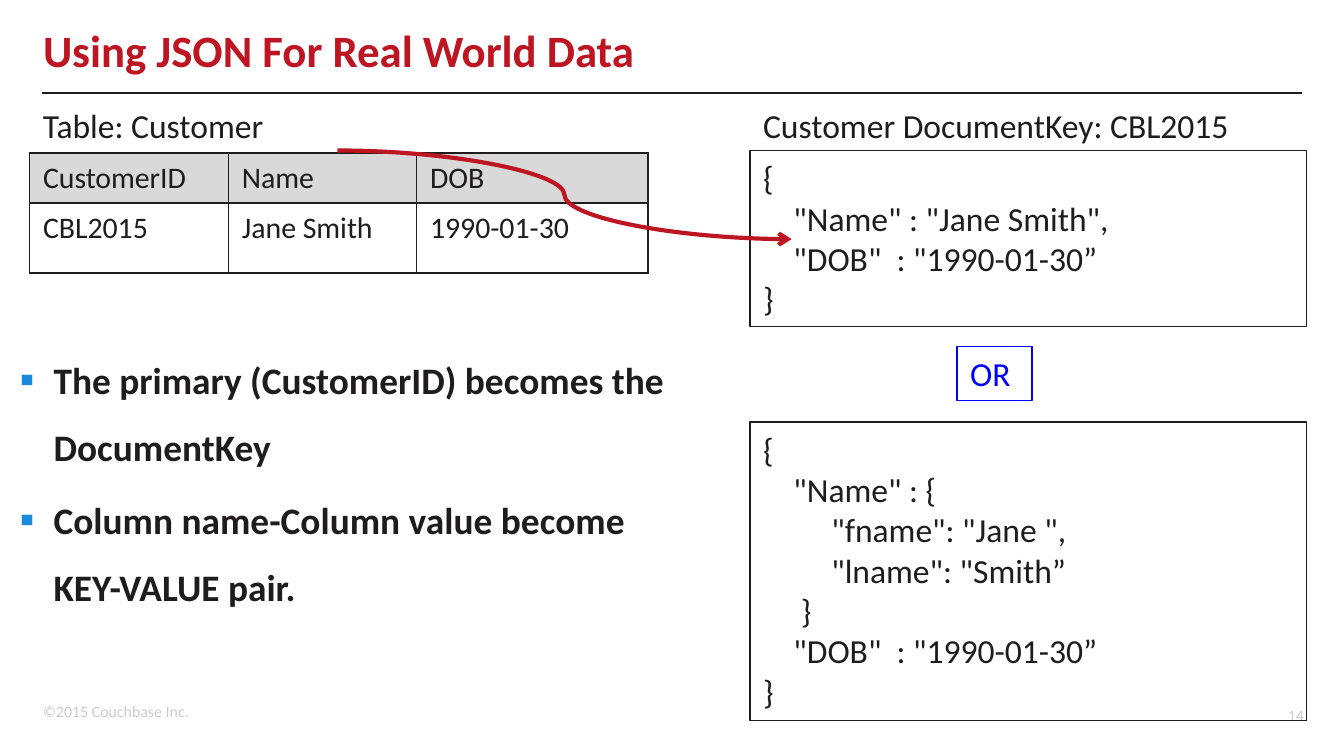
import pptx
import pptx.util
import pptx.dml.color
import pptx.enum.shapes
import pptx.enum.text
import pptx.oxml
import pptx.oxml.ns
import lxml.etree

INK, RED, BLUE, PALE = "1E1C1C", "BE1523", "0000FF", "CCCCCC"
LEFT, RIGHT = pptx.enum.text.PP_ALIGN.LEFT, pptx.enum.text.PP_ALIGN.RIGHT
TOP, MID = pptx.enum.text.MSO_ANCHOR.TOP, pptx.enum.text.MSO_ANCHOR.MIDDLE
KIND = pptx.enum.shapes.MSO_CONNECTOR
COLS, ROWS = 100, 56.25
FULL = (0, 0, COLS, ROWS)

SHORT = ["{", '    "Name" : "Jane Smith",', '    "DOB"  : "1990-01-30”', "}"]
NESTED = ["{", '    "Name" : {', '         "fname": "Jane ",',
          '         "lname": "Smith”', "     }", '    "DOB"  : "1990-01-30”', "}"]
CELLS = [["CustomerID", "Name", "DOB"], ["CBL2015", "Jane Smith", "1990-01-30"]]
POINTS = ["The primary (CustomerID) becomes the DocumentKey",
          "Column name-Column value become KEY-VALUE pair."]


def grid(*cells):
    """Turn counts of grid cells, a tenth of an inch each, into lengths."""
    return [pptx.util.Inches(cell / 10) for cell in cells]


def inner(box, x, y, w, h):
    """Return a box placed relative to the corner of another one."""
    return (box[0] + x, box[1] + y, w, h)


def tint(part, color):
    """Give a fill or line format a solid colour."""
    fill = getattr(part, "fill", part)
    fill.solid()
    fill.fore_color.rgb = pptx.dml.color.RGBColor.from_string(color)


def apply(target, form):
    """Set each attribute named in a dict."""
    for name, value in form.items():
        setattr(target, name, value)


def add_xml(parent, tag, **attrs):
    """Append one drawing element with attributes."""
    node = lxml.etree.SubElement(parent, pptx.oxml.ns.qn(tag))
    for name, value in attrs.items():
        node.set(name, value)
    return node


def bullet(para):
    """Give a paragraph a hanging blue square."""
    props = para._p.get_or_add_pPr()
    hang = grid(2.5)[0]
    props.set("marL", str(hang))
    props.set("indent", str(-hang))
    add_xml(add_xml(props, "a:buClr"), "a:srgbClr", val="178ADB")
    add_xml(props, "a:buSzPct", val="110000")
    add_xml(props, "a:buFont", typeface="Calibri")
    add_xml(props, "a:buChar", char="▪")


def write(frame, lines, size=18, color=INK, bold=False, anchor=TOP, dots=False, **form):
    """Fill a text frame with one paragraph for each line."""
    apply(frame, {"word_wrap": True, "vertical_anchor": anchor,
                  "auto_size": pptx.enum.text.MSO_AUTO_SIZE.NONE})
    for i, line in enumerate(lines):
        para = frame.paragraphs[0] if i == 0 else frame.add_paragraph()
        if dots:
            bullet(para)
        apply(para, {"alignment": LEFT, **form})
        run = para.add_run()
        run.text = line
        apply(run.font, {"name": "Calibri", "size": pptx.util.Pt(size), "bold": bold})
        tint(run.font, color)


def label(slide, box, lines, **form):
    """Place a plain text box."""
    write(slide.shapes.add_textbox(*grid(*box)).text_frame, lines, **form)


def panel(slide, box, lines, color=INK):
    """Place text in a thinly outlined rectangle."""
    shape = slide.shapes.add_shape(pptx.enum.shapes.MSO_SHAPE.RECTANGLE, *grid(*box))
    shape.shadow.inherit = False
    shape.fill.background()
    tint(shape.line, color)
    shape.line.width = pptx.util.Pt(0.75)
    write(shape.text_frame, lines, color=color)


def link(slide, kind, ends, color, width):
    """Draw a connector without shadow and return its line element."""
    line = slide.shapes.add_connector(kind, *grid(*ends))
    add_xml(line._element.spPr, "a:effectLst")
    tint(line.line, color)
    line.line.width = pptx.util.Pt(width)
    return line.line._get_or_add_ln()


def head(slide, box):
    """Place the title and the rule below it."""
    title = slide.shapes.title
    place = grid(*inner(box, 2.2, 1.1, 87.5, 5.9))
    apply(title, dict(zip(("left", "top", "width", "height"), place)))
    write(title.text_frame, ["Using JSON For Real World Data"], size=24,
          color=RED, bold=True, anchor=MID, line_spacing=0.8)
    x, y = box[0] + 3.1, box[1] + 6.9
    link(slide, KIND.STRAIGHT, (x, y, box[2] - x, y), INK, 1)


def foot(slide, box):
    """Place the copyright line and the page number."""
    label(slide, inner(box, 0, 0, 14, 2.4), ["©2015 Couchbase Inc."], size=8.5, color=PALE)
    label(slide, inner(box, box[2] - 8.1, 0, 8.1, 3), ["14"], size=8.5, color=PALE,
          anchor=MID, alignment=RIGHT)


def border(cell):
    """Outline all four sides of a cell."""
    props = cell._tc.get_or_add_tcPr()
    for i, side in enumerate(("a:lnL", "a:lnR", "a:lnT", "a:lnB")):
        line = lxml.etree.Element(pptx.oxml.ns.qn(side), w=str(pptx.util.Pt(1)))
        add_xml(add_xml(line, "a:solidFill"), "a:srgbClr", val=INK)
        props.insert(i, line)


def table(slide, box):
    """Place the customer table below its caption."""
    label(slide, inner(box, 0, 0, 38.5, 4), ["Table: Customer"])
    place = grid(*inner(box, 0, 4.1, box[2], box[3] - 4.1))
    data = slide.shapes.add_table(2, 3, *place).table
    for col, width in zip(data.columns, grid(14.8, 14, 17.2)):
        col.width = width
    for r, (row, height) in enumerate(zip(data.rows, grid(3.7, 5.2))):
        row.height = height
        for cell, word in zip(row.cells, CELLS[r]):
            write(cell.text_frame, [word], size=16)
            if r == 0:
                tint(cell, "D9D9D9")
            else:
                cell.fill.background()
            border(cell)


def code(slide, box):
    """Stack the two document forms with the choice between them."""
    wide = box[2]
    label(slide, inner(box, 0, 0, 38, 4), ["Customer DocumentKey: CBL2015"])
    panel(slide, inner(box, 0, 3.9, wide, 13.1), SHORT)
    panel(slide, inner(box, 0, 24.1, wide, 22.2), NESTED)
    panel(slide, inner(box, 15.4, 18.5, 5.6, 4), ["OR"], BLUE)


def build():
    """Build and save the slide."""
    deck = pptx.Presentation()
    deck.slide_width, deck.slide_height = grid(COLS, ROWS)
    slide = deck.slides.add_slide(deck.slide_layouts[5])
    foot(slide, (2.2, 51.7, 95.8, 3))
    head(slide, FULL)
    table(slide, (2.2, 7.3, 46, 13))
    label(slide, (0.5, 24.4, 51.8, 23.8), POINTS, size=20, bold=True, dots=True,
          line_spacing=1.5, space_after=pptx.util.Pt(3))
    code(slide, (55.8, 7.3, 41.4, 46.3))
    curve = link(slide, KIND.CURVE, (25.1, 11.2, 58.9, 17.8), RED, 2.25)
    add_xml(curve, "a:tailEnd", type="arrow")
    deck.save("out.pptx")


if __name__ == "__main__":
    build()
